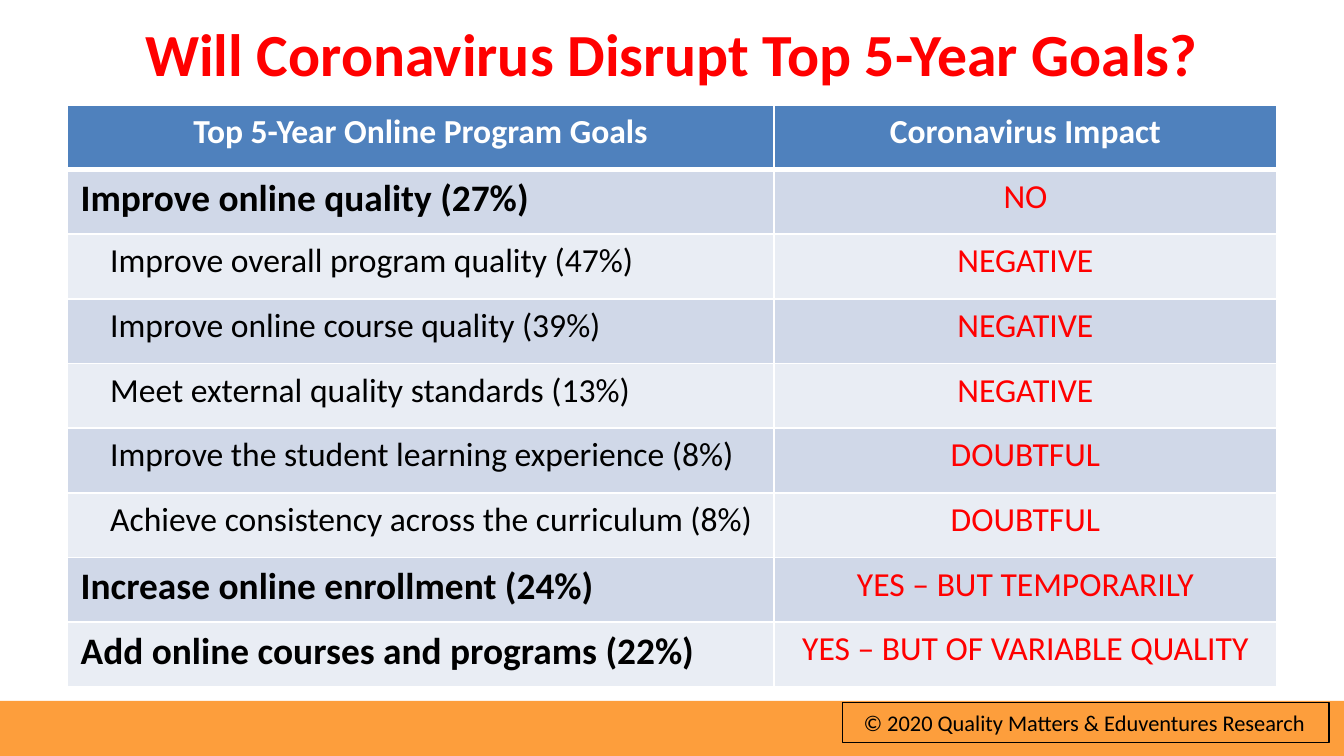
from dataclasses import dataclass

from lxml import etree
from pptx import Presentation
from pptx.dml.color import RGBColor
from pptx.enum.shapes import MSO_SHAPE
from pptx.enum.text import MSO_ANCHOR, PP_ALIGN
from pptx.oxml.ns import qn
from pptx.util import Inches, Pt

RECTANGLE = MSO_SHAPE.RECTANGLE
LEFT, CENTER = PP_ALIGN.LEFT, PP_ALIGN.CENTER
MIDDLE = MSO_ANCHOR.MIDDLE

# Widescreen page, 16:9
PAGE_WIDTH = 10
PAGE_HEIGHT = PAGE_WIDTH * 9 / 16


@dataclass(frozen=True)
class Theme:
    font: str = "Calibri"
    white: str = "FFFFFF"
    black: str = "000000"
    red: str = "FF0000"
    orange: str = "FD9E3C"
    header: str = "4F81BD"
    bands: tuple = ("D0D8E8", "E9EDF4")
    title_size: int = 32
    goal_size: int = 20
    body_size: int = 18
    credit_size: int = 12


THEME = Theme()
TITLE = "Will Coronavirus Disrupt Top 5-Year Goals?"
CREDIT = "© 2020 Quality Matters & Eduventures Research"
HEADINGS = ("Top 5-Year Online Program Goals", "Coronavirus Impact")
# Goal, impact, whether it is a main goal
GOALS = [
    ("Improve online quality (27%)", "NO", True),
    ("Improve overall program quality (47%)", "NEGATIVE", False),
    ("Improve online course quality (39%)", "NEGATIVE", False),
    ("Meet external quality standards (13%)", "NEGATIVE", False),
    ("Improve the student learning experience (8%)", "DOUBTFUL", False),
    ("Achieve consistency across the curriculum (8%)", "DOUBTFUL", False),
    ("Increase online enrollment (24%)", "YES – BUT TEMPORARILY", True),
    ("Add online courses and programs (22%)", "YES – BUT OF VARIABLE QUALITY", True),
]
COLUMN_SHARES = (5.26 / 9, 3.74 / 9)
SUBGOAL_MARGIN = 0.32


def set_values(target, values):
    for name, value in values.items():
        setattr(target, name, value)


def write(frame, text, size, color, bold=False, align=CENTER):
    para = frame.paragraphs[0]
    para.alignment = align
    span = para.add_run()
    span.text = text
    set_values(span.font, {"name": THEME.font, "size": Pt(size), "bold": bold})
    span.font.color.rgb = RGBColor.from_string(color)


def add_rectangle(page, box, fill=None, line=None):
    shape = page.shapes.add_shape(RECTANGLE, *map(Inches, box))
    shape.shadow.inherit = False
    if fill:
        shape.fill.solid()
        shape.fill.fore_color.rgb = RGBColor.from_string(fill)
    else:
        shape.fill.background()
    if line:
        shape.line.color.rgb = RGBColor.from_string(line)
        shape.line.width = Pt(0.75)
    else:
        shape.line.fill.background()
    return shape


def add_footer(page, box):
    left, top, width, height = box
    add_rectangle(page, box, fill=THEME.orange)
    # Credit box near the right end of the band
    credit_box = (left + width - 3.73, top + 0.01, 3.62, 0.3)
    credit = add_rectangle(page, credit_box, line=THEME.black)
    set_values(credit.text_frame, {
        "margin_left": Inches(0.1), "margin_right": Inches(0.12),
        "margin_top": Inches(0.05), "margin_bottom": Inches(0.05),
        "word_wrap": True, "vertical_anchor": MIDDLE,
    })
    write(credit.text_frame, CREDIT, THEME.credit_size, THEME.black)


def place_title(page, box):
    title = page.shapes.title
    set_values(title, dict(zip(("left", "top", "width", "height"), map(Inches, box))))
    set_values(title.text_frame, {"word_wrap": True, "vertical_anchor": MIDDLE})
    write(title.text_frame, TITLE, THEME.title_size, THEME.red, bold=True)


def set_borders(cell, top, bottom):
    properties = cell._tc.get_or_add_tcPr()
    for tag, width in (("a:lnL", 1), ("a:lnR", 1), ("a:lnT", top), ("a:lnB", bottom)):
        line = etree.SubElement(properties, qn(tag), w=str(Pt(width)))
        fill = etree.SubElement(line, qn("a:solidFill"))
        etree.SubElement(fill, qn("a:srgbClr"), val=THEME.white)


def fill_cell(cell, color):
    cell.fill.solid()
    cell.fill.fore_color.rgb = RGBColor.from_string(color)


def add_goals_table(page, box):
    left, top, width, height = box
    row_count = len(GOALS) + 1
    table = page.shapes.add_table(row_count, 2, *map(Inches, box)).table
    for column, share in zip(table.columns, COLUMN_SHARES):
        column.width = Inches(width * share)
    for row in table.rows:
        row.height = Inches(height / row_count)

    # Header row, with a thick rule below
    for column, heading in enumerate(HEADINGS):
        cell = table.cell(0, column)
        set_borders(cell, 1, 3)
        fill_cell(cell, THEME.header)
        write(cell.text_frame, heading, THEME.body_size, THEME.white, bold=True)

    # Banded goal rows; subgoals are smaller and indented
    for number, (goal, impact, is_main) in enumerate(GOALS, start=1):
        goal_cell, impact_cell = table.cell(number, 0), table.cell(number, 1)
        for cell in (goal_cell, impact_cell):
            set_borders(cell, 3 if number == 1 else 1, 1)
            fill_cell(cell, THEME.bands[(number - 1) % 2])
        if not is_main:
            goal_cell.margin_left = Inches(SUBGOAL_MARGIN)
        size = THEME.goal_size if is_main else THEME.body_size
        write(goal_cell.text_frame, goal, size, THEME.black, is_main, LEFT)
        write(impact_cell.text_frame, impact, THEME.body_size, THEME.red)


def main():
    deck = Presentation()
    set_values(deck, {
        "slide_width": Inches(PAGE_WIDTH), "slide_height": Inches(PAGE_HEIGHT),
    })
    page = deck.slides.add_slide(deck.slide_layouts.get_by_name("Title Only"))
    footer_height = 0.41
    add_footer(page, (0, PAGE_HEIGHT - footer_height, PAGE_WIDTH, footer_height))
    place_title(page, (0.5, 0, 9, 0.78))
    add_goals_table(page, (0.5, 0.78, 9, 4.33))
    deck.save("out.pptx")


if __name__ == "__main__":
    main()
